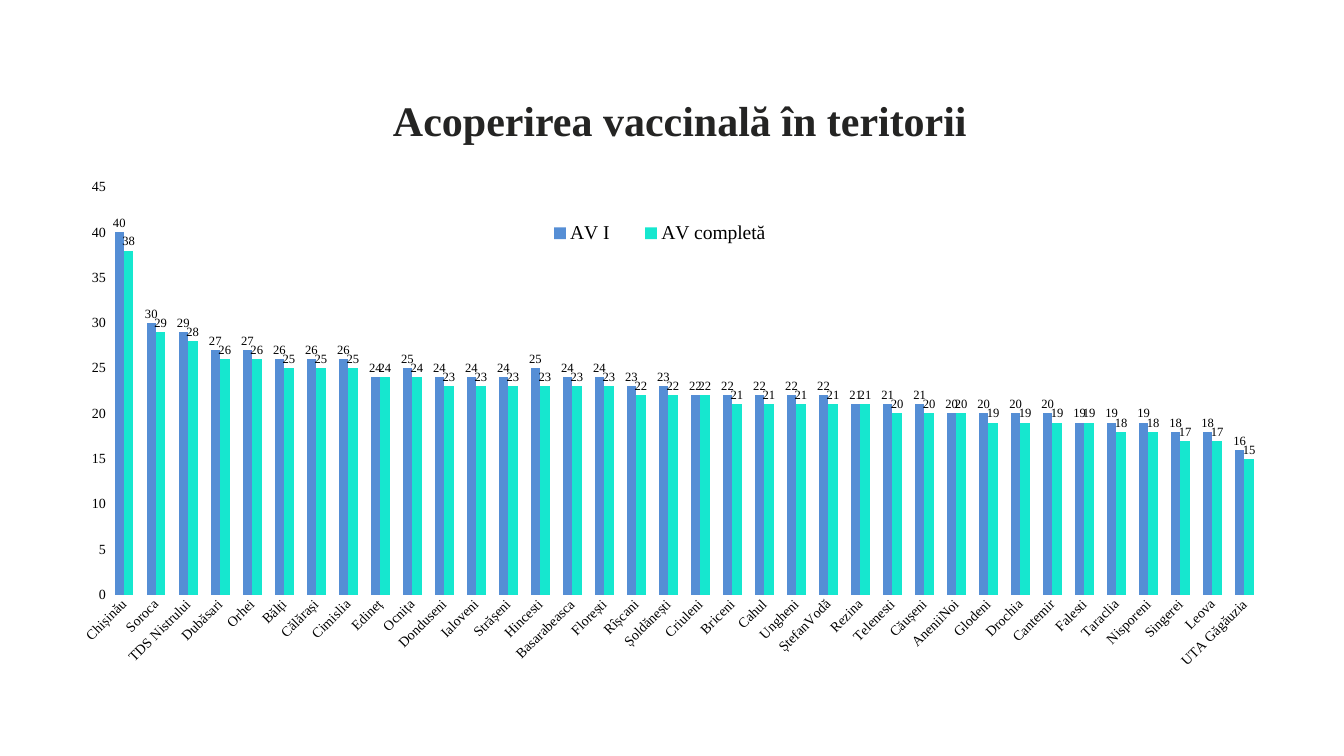
from lxml import etree
from pptx import Presentation
from pptx.chart.data import CategoryChartData
from pptx.dml.color import RGBColor
from pptx.enum import chart as kinds, text
from pptx.oxml import ns
from pptx.util import Inches, Pt

FONT = "Times New Roman"
BLACK = RGBColor(0x00, 0x00, 0x00)
CHARCOAL = RGBColor(0x24, 0x24, 0x23)
BLUE = RGBColor(0x55, 0x8E, 0xD5)
TURQUOISE = RGBColor(0x16, 0xE7, 0xCF)

COVERAGE = [
    ("Chișinău", 40, 38), ("Soroca", 30, 29), ("TDS Nistrului", 29, 28),
    ("Dubăsari", 27, 26), ("Orhei", 27, 26), ("Bălți", 26, 25),
    ("Călărași", 26, 25), ("Cimislia", 26, 25), ("Edineț", 24, 24),
    ("Ocnița", 25, 24), ("Donduseni", 24, 23), ("Ialoveni", 24, 23),
    ("Strășeni", 24, 23), ("Hincesti", 25, 23), ("Basarabeasca", 24, 23),
    ("Florești", 24, 23), ("Rîșcani", 23, 22), ("Șoldănești", 23, 22),
    ("Criuleni", 22, 22), ("Briceni", 22, 21), ("Cahul", 22, 21),
    ("Ungheni", 22, 21), ("ȘtefanVodă", 22, 21), ("Rezina", 21, 21),
    ("Telenesti", 21, 20), ("Căușeni", 21, 20), ("AneniiNoi", 20, 20),
    ("Glodeni", 20, 19), ("Drochia", 20, 19), ("Cantemir", 20, 19),
    ("Falesti", 19, 19), ("Taraclia", 19, 18), ("Nisporeni", 19, 18),
    ("Singerei", 18, 17), ("Leova", 18, 17), ("UTA Găgăuzia", 16, 15),
]


def style_font(font, size, color=BLACK, bold=False):
    font.name = FONT
    font.size = Pt(size)
    font.color.rgb = color
    font.bold = bold


def add_title(page, words):
    box = page.shapes.title
    box.left, box.top = Inches(3.33), Inches(1.83)
    box.width, box.height = Inches(20.33), Inches(1.11)
    frame = box.text_frame
    frame.word_wrap = True
    frame.vertical_anchor = text.MSO_ANCHOR.MIDDLE
    para = frame.paragraphs[0]
    para.alignment = text.PP_ALIGN.CENTER
    span = para.add_run()
    span.text = words
    style_font(span.font, 60, CHARCOAL, True)


def set_layout(parent, position, left, top, width, height, inner=False):
    for old in parent.findall(ns.qn("c:layout")):
        parent.remove(old)
    layout = etree.Element(ns.qn("c:layout"))
    manual = etree.SubElement(layout, ns.qn("c:manualLayout"))
    settings = [("layoutTarget", "inner")] if inner else []
    settings += [("xMode", "edge"), ("yMode", "edge"), ("x", left),
                 ("y", top), ("w", width), ("h", height)]
    for name, value in settings:
        etree.SubElement(manual, ns.qn("c:" + name)).set("val", str(value))
    parent.insert(position, layout)


def style_axis(axis):
    axis.has_major_gridlines = False
    axis.major_tick_mark = kinds.XL_TICK_MARK.NONE
    axis.minor_tick_mark = kinds.XL_TICK_MARK.NONE
    axis.format.line.fill.background()
    style_font(axis.tick_labels.font, 20)


def style_series(series, color):
    series.format.fill.solid()
    series.format.fill.fore_color.rgb = color
    series.invert_if_negative = False
    labels = series.data_labels
    labels.show_value = True
    labels.number_format = "0"
    labels.number_format_is_linked = False
    labels.position = kinds.XL_LABEL_POSITION.OUTSIDE_END
    style_font(labels.font, 18)


def add_legend(chart):
    chart.has_legend = True
    legend = chart.legend
    legend.position = kinds.XL_LEGEND_POSITION.BOTTOM
    legend.include_in_layout = False
    style_font(legend.font, 28)
    set_layout(legend._element, 1, 0.38, 0.08, 0.22, 0.07)


def add_coverage_chart(page):
    names, first_dose, complete = zip(*COVERAGE)
    data = CategoryChartData(number_format="0")
    data.categories = names
    data.add_series("AV I", first_dose)
    data.add_series("AV completă", complete)
    chart = page.shapes.add_chart(
        kinds.XL_CHART_TYPE.COLUMN_CLUSTERED, Inches(1.17), Inches(3.39),
        Inches(24.33), Inches(10.78), data).chart
    chart.has_title = False
    style_font(chart.font, 20)
    plot = chart.plots[0]
    plot.gap_width = 138
    plot.overlap = 0
    plot.vary_by_categories = False
    for series, color in zip(plot.series, (BLUE, TURQUOISE)):
        style_series(series, color)
    for axis in (chart.category_axis, chart.value_axis):
        style_axis(axis)
    label_body = next(chart.category_axis._element.iter(ns.qn("a:bodyPr")))
    label_body.set("rot", "-2700000")
    values = chart.value_axis
    values.minimum_scale, values.maximum_scale, values.major_unit = 0, 45, 5
    values.tick_labels.number_format = "0"
    values.tick_labels.number_format_is_linked = False
    add_legend(chart)
    area = chart._chartSpace.chart.plotArea
    set_layout(area, 0, 0.04, 0.03, 0.94, 0.75, inner=True)


def main():
    deck = Presentation()
    deck.slide_width, deck.slide_height = Inches(26.67), Inches(15)
    page = deck.slides.add_slide(deck.slide_layouts[5])
    add_title(page, "Acoperirea vaccinală în teritorii")
    add_coverage_chart(page)
    deck.save("out.pptx")


if __name__ == "__main__":
    main()
